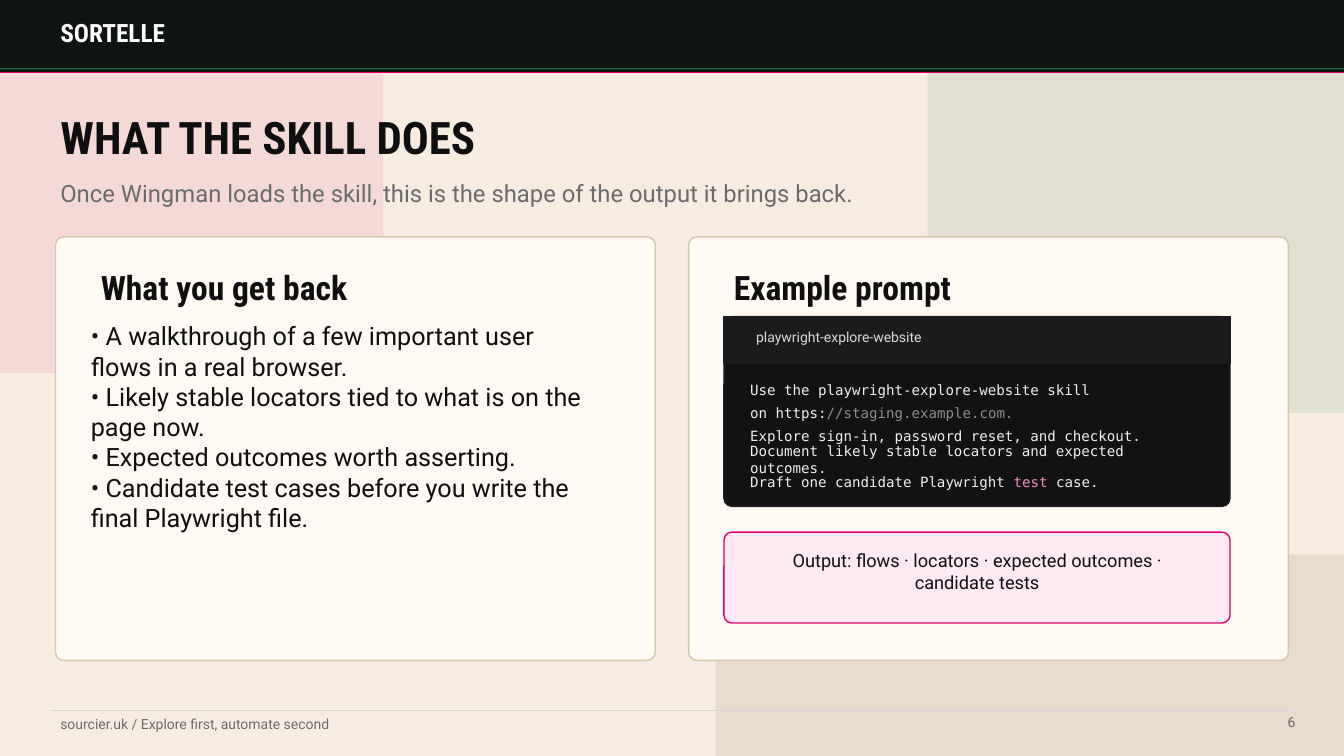
from dataclasses import dataclass

from lxml.etree import SubElement
from pptx import Presentation
from pptx.dml.color import RGBColor
from pptx.dml.fill import FillFormat
from pptx.enum.shapes import MSO_CONNECTOR, MSO_SHAPE
from pptx.enum.text import MSO_ANCHOR, MSO_AUTO_SIZE, PP_ALIGN
from pptx.oxml.ns import qn
from pptx.shapes.autoshape import Shape
from pptx.slide import Slide
from pptx.util import Cm, Pt

WIDTH, HEIGHT = 33.86, 19.05
MARGIN = 1.27
PINK, GREEN, INK, GRAY = "E8006A", "2A7D5B", "0F0F0F", "6B6B6B"
CODE_TEXT, CODE_COMMENT, CODE_KEYWORD = "EFEFEF", "8C8C8C", "F58AC1"
BODY_FONT, HEADING_FONT, CODE_FONT = "Roboto", "Roboto Condensed", "DejaVu Sans Mono"
CARD_TOP, CARD_WIDTH, CARD_HEIGHT, CARD_PADDING = 5.97, 15.11, 10.67, 0.89
CODE_TOP, CODE_PITCH = 9.6, 0.58


@dataclass(frozen=True)
class Box:
    left: float
    top: float
    width: float
    height: float


@dataclass(frozen=True)
class Panel:
    box: Box
    fill: str
    line: str | None = None
    radius: float = 0
    opacity: int = 100


@dataclass(frozen=True)
class Rule:
    left: float
    right: float
    top: float
    color: str
    opacity: int = 100


@dataclass(frozen=True)
class Run:
    text: str
    color: str


@dataclass(frozen=True)
class Card:
    left: float
    heading: str


BACKDROPS = [
    Panel(Box(-5.33, -3.05, 14.99, 12.45), PINK, radius=0.76, opacity=8),
    Panel(Box(23.37, -3.81, 15.75, 14.22), GREEN, radius=0.76, opacity=10),
    Panel(Box(18.03, 13.97, 20.57, 8.64), "E5D8C9", radius=0.76, opacity=76),
    Panel(Box(0, 0, WIDTH, 1.83), "101410", "101410"),
]
RULES = [
    Rule(0, WIDTH, 1.83, PINK),
    Rule(0, WIDTH, 1.73, GREEN, 76),
    Rule(MARGIN, 32.59, 17.91, "D7D7D7"),
]
CARDS = [Card(1.4, "What you get back"), Card(17.35, "Example prompt")]
PROMPT_PANELS = [
    Panel(Box(18.24, 7.98, 12.75, 4.78), "121212", "1F1F1F", 0.2),
    Panel(Box(18.24, 7.98, 12.75, 1.17), "1B1B1B", "1B1B1B"),
    Panel(Box(18.24, 13.41, 12.75, 2.29), "FDEAF2", PINK, 0.2),
]
RESULTS = [
    "• A walkthrough of a few important user flows in a real browser.",
    "• Likely stable locators tied to what is on the page now.",
    "• Expected outcomes worth asserting.",
    "• Candidate test cases before you write the final Playwright file.",
]
CODE_LINES = [
    [Run("Use the playwright-explore-website skill", CODE_TEXT)],
    [Run("on https:", CODE_TEXT), Run("//staging.example.com.", CODE_COMMENT)],
    [Run("Explore sign-in, password reset, and checkout.", CODE_TEXT)],
    [Run("Document likely stable locators and expected outcomes.", CODE_TEXT)],
    [
        Run("Draft one candidate Playwright ", CODE_TEXT),
        Run("test", CODE_KEYWORD),
        Run(" case.", CODE_TEXT),
    ],
]


def paint(fill: FillFormat, color: str, opacity: int = 100) -> None:
    fill.solid()
    fill.fore_color.rgb = RGBColor.from_string(color)
    if opacity < 100:
        color_element = fill._xPr.find(qn("a:solidFill"))[0]
        SubElement(color_element, qn("a:alpha")).set("val", str(opacity * 1000))


def add_panel(slide: Slide, panel: Panel) -> None:
    box = panel.box
    kind = MSO_SHAPE.ROUNDED_RECTANGLE if panel.radius else MSO_SHAPE.RECTANGLE
    shape = slide.shapes.add_shape(
        kind, Cm(box.left), Cm(box.top), Cm(box.width), Cm(box.height)
    )
    shape.shadow.inherit = False
    if panel.radius:
        shape.adjustments[0] = panel.radius / min(box.width, box.height)
    paint(shape.fill, panel.fill, panel.opacity)
    if panel.line:
        paint(shape.line.fill, panel.line)
        shape.line.width = Pt(1)
    else:
        shape.line.fill.background()


def add_rule(slide: Slide, rule: Rule) -> None:
    connector = slide.shapes.add_connector(
        MSO_CONNECTOR.STRAIGHT, Cm(rule.left), Cm(rule.top), Cm(rule.right), Cm(rule.top)
    )
    paint(connector.line.fill, rule.color, rule.opacity)
    connector.line.width = Pt(1)
    SubElement(connector._element.spPr, qn("a:effectLst"))


def write_text(
    shape: Shape,
    text: str | list[str] | list[list[Run]],
    *,
    size: float,
    color: str = INK,
    font: str = BODY_FONT,
    bold: bool = False,
    align: PP_ALIGN = PP_ALIGN.LEFT,
    anchor: MSO_ANCHOR = MSO_ANCHOR.MIDDLE,
    inset: bool = True,
) -> None:
    frame = shape.text_frame
    frame.word_wrap = True
    frame.auto_size = MSO_AUTO_SIZE.NONE
    frame.vertical_anchor = anchor
    if not inset:
        frame.margin_left = frame.margin_right = 0
        frame.margin_top = frame.margin_bottom = 0
    for index, line in enumerate([text] if isinstance(text, str) else text):
        paragraph = frame.add_paragraph() if index else frame.paragraphs[0]
        paragraph.alignment = align
        for part in [Run(line, color)] if isinstance(line, str) else line:
            run = paragraph.add_run()
            run.text = part.text
            run.font.name = font
            run.font.size = Pt(size)
            run.font.bold = bold
            paint(run.font.fill, part.color)


def add_text(slide: Slide, box: Box, text: str | list[str] | list[list[Run]], **style) -> None:
    shape = slide.shapes.add_textbox(
        Cm(box.left), Cm(box.top), Cm(box.width), Cm(box.height)
    )
    write_text(shape, text, **style)


def place_title(slide: Slide, box: Box, text: str) -> None:
    title = slide.shapes.title
    title.left, title.top = Cm(box.left), Cm(box.top)
    title.width, title.height = Cm(box.width), Cm(box.height)
    write_text(title, text, size=32, font=HEADING_FONT, bold=True)
    slide.shapes._spTree.append(title._element)


def add_card(slide: Slide, card: Card) -> None:
    box = Box(card.left, CARD_TOP, CARD_WIDTH, CARD_HEIGHT)
    add_panel(slide, Panel(box, "FFFAF4", "D8C5AE", 0.2))
    heading_box = Box(card.left + CARD_PADDING, 6.91, 12.7, 0.64)
    add_text(slide, heading_box, card.heading, size=24, font=HEADING_FONT, bold=True)


def main() -> None:
    presentation = Presentation()
    presentation.slide_width, presentation.slide_height = Cm(WIDTH), Cm(HEIGHT)
    slide = presentation.slides.add_slide(presentation.slide_layouts[5])
    paint(slide.background.fill, "F6ECE1")

    for backdrop in BACKDROPS:
        add_panel(slide, backdrop)
    for rule in RULES:
        add_rule(slide, rule)
    add_text(slide, Box(MARGIN, 0.43, 7.11, 0.76), "SORTELLE",
             size=18, color="FFFFFF", font=HEADING_FONT, bold=True)
    place_title(slide, Box(MARGIN, 2.54, 22.61, 1.78), "WHAT THE SKILL DOES")
    add_text(slide, Box(MARGIN, 4.37, 26.42, 0.97),
             "Once Wingman loads the skill, this is the shape of the output it brings back.",
             size=17, color=GRAY, anchor=MSO_ANCHOR.TOP)

    for card in CARDS:
        add_card(slide, card)
    add_text(slide, Box(2.29, 8.08, 12.7, 7.49), RESULTS,
             size=18, anchor=MSO_ANCHOR.TOP, inset=False)

    for panel in PROMPT_PANELS:
        add_panel(slide, panel)
    add_text(slide, Box(18.8, 8.28, 11.63, 0.41), "playwright-explore-website",
             size=10, color="D9D9D9")
    for index, runs in enumerate(CODE_LINES):
        add_text(slide, Box(18.9, CODE_TOP + index * CODE_PITCH, 11.43, 0.46), [runs],
                 size=10.1, font=CODE_FONT, inset=False)
    add_text(slide, Box(18.85, 14.15, 11.53, 0.51),
             "Output: flows · locators · expected outcomes · candidate tests",
             size=13, align=PP_ALIGN.CENTER)

    add_text(slide, Box(MARGIN, 17.98, 15.24, 0.51),
             "sourcier.uk / Explore first, automate second", size=10, color=GRAY)
    add_text(slide, Box(29.85, 17.98, 2.79, 0.51), "6", size=10, color=GRAY,
             align=PP_ALIGN.RIGHT, anchor=MSO_ANCHOR.TOP, inset=False)
    presentation.save("out.pptx")


if __name__ == "__main__":
    main()
